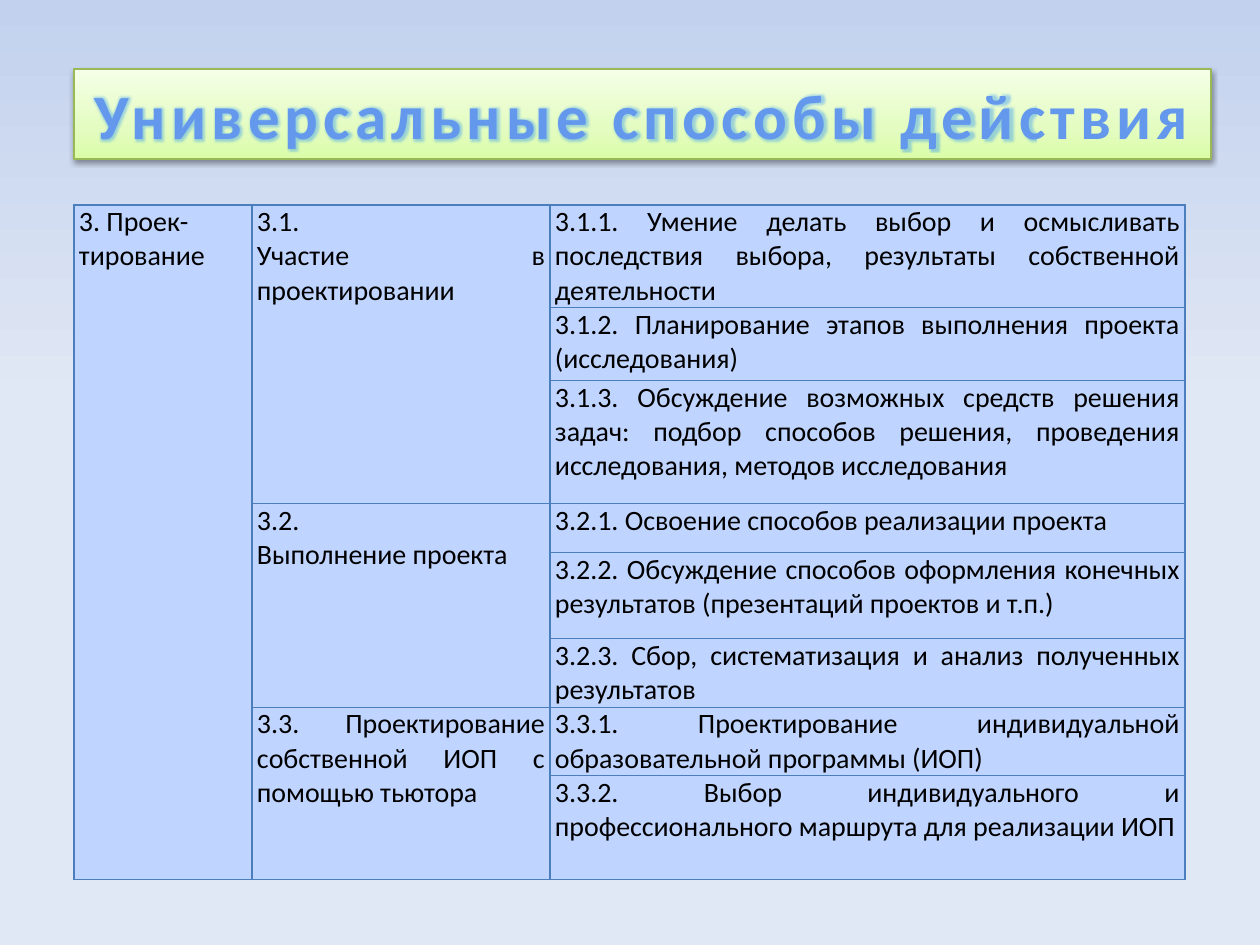
import pptx
import pptx.util
import pptx.enum.text
import pptx.dml.color
import pptx.oxml
import pptx.oxml.ns

PX = 914400 // 126
NS = 'xmlns:a="http://schemas.openxmlformats.org/drawingml/2006/main"'
COLORS = {
    "sky": "C2D1ED", "mist": "E1E8F5",
    "lime": "DAFDA7", "pale lime": "E4FCC2", "cream": "F5FFE7",
    "title edge": "98B955", "title": "6398ED", "glow": "0C82FF",
    "cell": "BFD4FF", "grid": "4B7EBC", "text": "000000", "shadow": "000000",
}
ALIGN = pptx.enum.text.PP_ALIGN


def rgb(name):
    return pptx.dml.color.RGBColor.from_string(COLORS[name])


def set_gradient(fill, element, angle, stops):
    fill.gradient()
    fill.gradient_angle = angle
    stop_list = element.find(".//" + pptx.oxml.ns.qn("a:gsLst"))
    for old in list(stop_list):
        stop_list.remove(old)
    for percent, name in stops:
        stop_list.append(pptx.oxml.parse_xml(
            f'<a:gs {NS} pos="{percent * 1000}"><a:srgbClr val="{COLORS[name]}"/></a:gs>'))


deck = pptx.Presentation()
deck.slide_width = 1260 * PX
deck.slide_height = 945 * PX
slide = deck.slides.add_slide(deck.slide_layouts[5])

# Background
background = slide.background
set_gradient(background.fill, slide._element, 270,
             [(0, "sky"), (43, "mist"), (100, "mist")])

# Title banner
title = slide.shapes.title
title.left, title.top, title.width, title.height = [v * PX for v in (74, 69, 1137, 90)]
set_gradient(title.fill, title._element, 90,
             [(0, "lime"), (35, "pale lime"), (100, "cream")])
title.line.color.rgb = rgb("title edge")
title.line.width = pptx.util.Pt(0.75)
title._element.spPr.append(pptx.oxml.parse_xml(
    f'<a:effectLst {NS}><a:outerShdw blurRad="40000" dist="20000" dir="5400000" rotWithShape="0">'
    f'<a:srgbClr val="{COLORS["shadow"]}"><a:alpha val="38000"/></a:srgbClr>'
    '</a:outerShdw></a:effectLst>'))
title.text_frame.word_wrap = False
heading = title.text_frame.paragraphs[0]
heading.alignment = ALIGN.CENTER
heading_run = heading.add_run()
heading_run.text = "Универсальные способы действия"
font = heading_run.font
font.size = pptx.util.Pt(36)
font.bold = True
font.color.rgb = rgb("title")
heading_props = heading_run._r.get_or_add_rPr()
heading_props.set("spc", "300")
heading_props.append(pptx.oxml.parse_xml(
    f'<a:effectLst {NS}><a:glow rad="45500"><a:srgbClr val="{COLORS["glow"]}">'
    '<a:alpha val="35000"/></a:srgbClr></a:glow></a:effectLst>'))
font.name = "Calibri"

# Table content: each stage with its skills
stages = [
    ("3.1.\nУчастие в проектировании", [
        "3.1.1. Умение делать выбор и осмысливать последствия выбора, результаты собственной деятельности",
        "3.1.2. Планирование этапов выполнения проекта (исследования)",
        "3.1.3. Обсуждение возможных средств решения задач: подбор способов решения, "
        "проведения исследования, методов исследования"]),
    ("3.2.\nВыполнение проекта", [
        "3.2.1. Освоение способов реализации проекта",
        "3.2.2. Обсуждение способов оформления конечных результатов (презентаций проектов и т.п.)",
        "3.2.3. Сбор, систематизация и анализ полученных результатов"]),
    ("3.3. Проектирование собственной ИОП с помощью тьютора", [
        "3.3.1. Проектирование индивидуальной образовательной программы (ИОП)",
        "3.3.2. Выбор индивидуального и профессионального маршрута для реализации ИОП"]),
]
column_widths = [178, 298, 635]
row_heights = [102, 73, 123, 49, 86, 68, 68, 104]

skills_table = slide.shapes.add_table(
    len(row_heights), len(column_widths), 74 * PX, 205 * PX,
    sum(column_widths) * PX, sum(row_heights) * PX).table
skills_table.first_row = False
skills_table.horz_banding = False
for column, width in zip(skills_table.columns, column_widths):
    column.width = width * PX
for row, height in zip(skills_table.rows, row_heights):
    row.height = height * PX

# Text and merged cells
skills_table.cell(0, 0).text = "3. Проек-тирование"
skills_table.cell(0, 0).merge(skills_table.cell(len(row_heights) - 1, 0))
first = 0
for stage, skills in stages:
    skills_table.cell(first, 1).text = stage
    skills_table.cell(first, 1).merge(skills_table.cell(first + len(skills) - 1, 1))
    for offset, skill in enumerate(skills):
        skills_table.cell(first + offset, 2).text = skill
    first += len(skills)

# Cell formatting
for row in skills_table.rows:
    for index, cell in enumerate(row.cells):
        cell.margin_left = cell.margin_right = 5 * PX
        cell.margin_top = cell.margin_bottom = 0
        cell_props = cell._tc.get_or_add_tcPr()
        for side in "LRTB":
            cell_props.append(pptx.oxml.parse_xml(
                f'<a:ln{side} {NS} w="9525"><a:solidFill><a:srgbClr val="{COLORS["grid"]}"/>'
                f'</a:solidFill></a:ln{side}>'))
        cell.fill.solid()
        cell.fill.fore_color.rgb = rgb("cell")
        for paragraph in cell.text_frame.paragraphs:
            paragraph.alignment = ALIGN.JUSTIFY if index else ALIGN.LEFT
            paragraph.font.size = pptx.util.Pt(16)
            paragraph.font.name = "Calibri"
            paragraph.font.color.rgb = rgb("text")

deck.save("out.pptx")
